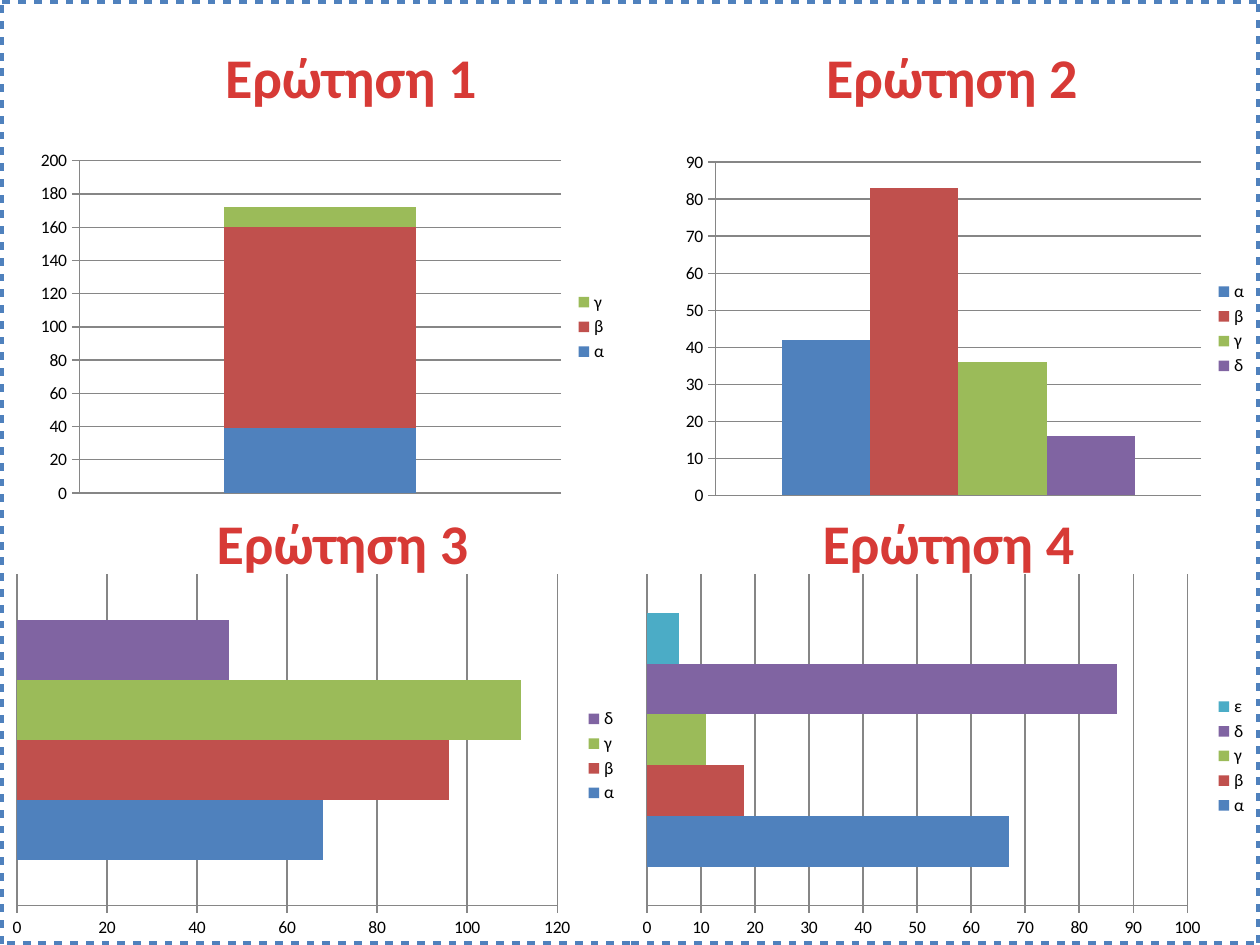
from lxml import etree
from pptx import Presentation
from pptx import util as u
from pptx.chart.data import CategoryChartData
from pptx.dml.color import RGBColor
from pptx.enum import chart as charts, dml, shapes, text
from pptx.oxml.ns import qn

BLUE = RGBColor(0x4F, 0x81, 0xBD)
SERIES_COLORS = [
    BLUE,
    RGBColor(0xC0, 0x50, 0x4D),
    RGBColor(0x9B, 0xBB, 0x59),
    RGBColor(0x80, 0x64, 0xA2),
    RGBColor(0x4B, 0xAC, 0xC6),
]
TITLE_RED = RGBColor(0xD7, 0x3A, 0x36)
GRID_GRAY = RGBColor(0x86, 0x86, 0x86)
BLACK = RGBColor(0, 0, 0)
FONT = "Calibri"
ANSWERS = "αβγδε"
WIDTH, HEIGHT = 720, 540

STACKED = charts.XL_CHART_TYPE.COLUMN_STACKED
COLUMNS = charts.XL_CHART_TYPE.COLUMN_CLUSTERED
BARS = charts.XL_CHART_TYPE.BAR_CLUSTERED

# Each question: title, title box, wrap, chart type, chart box, answer counts
QUESTIONS = [
    ("Ερώτηση 1", (70.6, 20.9, 259.9, 46), True,
     STACKED, (16.6, 82.1, 337.7, 209.5), [39, 121, 12]),
    ("Ερώτηση 2", (405.4, 20.9, 277.2, 46), True,
     COLUMNS, (385.2, 82.8, 334.8, 210.2), [42, 83, 36, 16]),
    ("Ερώτηση 3", (115.9, 287.3, 159.8, 46), False,
     BARS, (0, 324, 360, 216), [68, 96, 112, 47]),
    ("Ερώτηση 4", (462.2, 287.3, 159.8, 46), False,
     BARS, (360, 324, 360, 216), [67, 18, 11, 87, 6]),
]


def points(box):
    return [u.Pt(value) for value in box]


def apply_format(target, values):
    for name, value in values.items():
        setattr(target, name, value)


def add_title(slide, title, box, wrap):
    frame = slide.shapes.add_textbox(*points(box)).text_frame
    apply_format(frame, {"word_wrap": wrap,
                         "auto_size": text.MSO_AUTO_SIZE.SHAPE_TO_FIT_TEXT})
    paragraph = frame.paragraphs[0]
    paragraph.alignment = text.PP_ALIGN.CENTER
    run = paragraph.add_run()
    run.text = title
    apply_format(run.font, {"name": FONT, "size": u.Pt(32), "bold": True})
    run.font.color.rgb = TITLE_RED
    # Letter outline
    outline = etree.Element(qn("a:ln"), w=str(u.Pt(1.42)))
    fill = etree.SubElement(outline, qn("a:solidFill"))
    etree.SubElement(fill, qn("a:srgbClr"), val=str(TITLE_RED))
    run.font._element.insert(0, outline)


def add_answer_chart(slide, kind, box, counts):
    data = CategoryChartData()
    data.categories = ["1"]
    for answer, count in zip(ANSWERS, counts):
        data.add_series(answer, [count])
    chart = slide.shapes.add_chart(kind, *points(box), data).chart
    apply_format(chart, {"has_title": False, "has_legend": True})
    apply_format(chart.font, {"name": FONT, "size": u.Pt(10)})
    chart.font.color.rgb = BLACK
    apply_format(chart.legend, {"position": charts.XL_LEGEND_POSITION.RIGHT,
                                "include_in_layout": False})

    # Axes and gridlines
    chart.category_axis.visible = False
    axis = chart.value_axis
    apply_format(axis, {"has_major_gridlines": True,
                        "major_tick_mark": charts.XL_TICK_MARK.OUTSIDE})
    for line in (axis.format.line, axis.major_gridlines.format.line):
        line.color.rgb = GRID_GRAY
        line.width = u.Pt(0.75)

    # Bars
    plot = chart.plots[0]
    apply_format(plot, {"vary_by_categories": False, "gap_width": 150,
                        "overlap": 100 if kind == STACKED else 0})
    for series, color in zip(plot.series, SERIES_COLORS):
        series.format.fill.solid()
        series.format.fill.fore_color.rgb = color


def add_border(slide):
    border = slide.shapes.add_shape(shapes.MSO_SHAPE.RECTANGLE,
                                    *points((0, 0, WIDTH, HEIGHT)))
    border.shadow.inherit = False
    border.fill.background()
    border.line.color.rgb = BLUE
    apply_format(border.line, {"width": u.Pt(4.5),
                               "dash_style": dml.MSO_LINE.ROUND_DOT})


def main():
    presentation = Presentation()
    apply_format(presentation, {"slide_width": u.Pt(WIDTH),
                                "slide_height": u.Pt(HEIGHT)})
    slide = presentation.slides.add_slide(presentation.slide_layouts[6])
    for title, title_box, wrap, kind, chart_box, counts in QUESTIONS:
        add_answer_chart(slide, kind, chart_box, counts)
        add_title(slide, title, title_box, wrap)
    add_border(slide)
    presentation.save("out.pptx")


if __name__ == "__main__":
    main()
